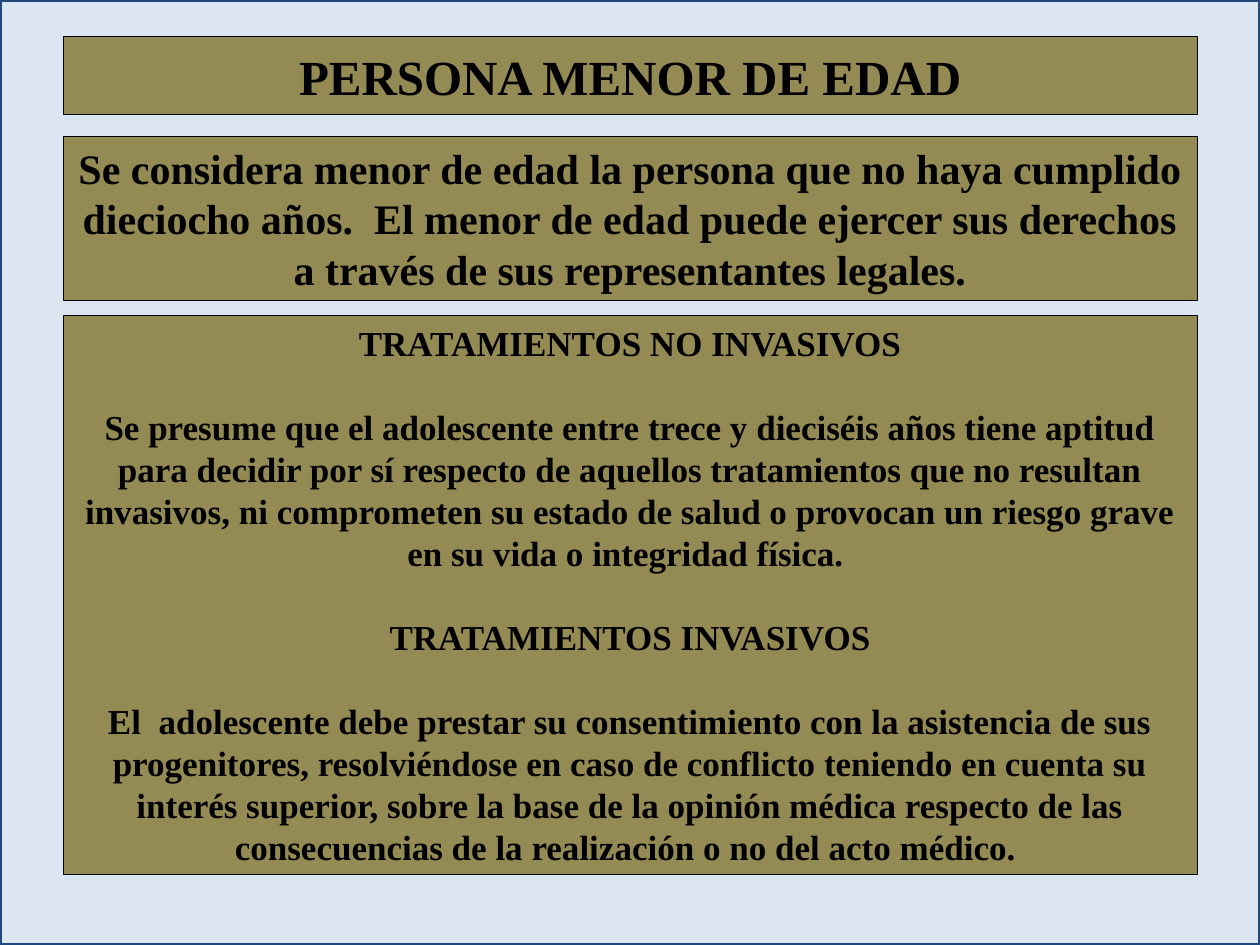
import pptx
import pptx.util
import pptx.dml.color
import pptx.enum.shapes
import pptx.enum.text
from dataclasses import dataclass

Inches = pptx.util.Inches
Pt = pptx.util.Pt
RGB = pptx.dml.color.RGBColor.from_string


@dataclass(frozen=True)
class Theme:
    font: str = "Times New Roman"
    ink: str = "000000"
    panel: str = "948A54"
    back: str = "DCE6F2"
    frame: str = "1F497D"
    head: int = 28
    lead: int = 24
    body: int = 20


def apply(target, values):
    for name, value in values.items():
        setattr(target, name, value)


class Deck:
    def __init__(self, theme):
        self.theme = theme
        self.show = pptx.Presentation()
        apply(self.show, {"slide_width": Inches(10), "slide_height": Inches(7.5)})
        self.slide = self.show.slides.add_slide(self.show.slide_layouts[3])

    def paint(self, shape, fill, line, width):
        shape.fill.solid()
        shape.fill.fore_color.rgb = RGB(fill)
        shape.line.color.rgb = RGB(line)
        shape.line.width = Pt(width)

    def backdrop(self):
        """Add the framed backdrop behind every placeholder."""
        rect = self.slide.shapes.add_shape(
            pptx.enum.shapes.MSO_SHAPE.RECTANGLE, 0, 0,
            self.show.slide_width, self.show.slide_height)
        rect.shadow.inherit = False
        self.paint(rect, self.theme.back, self.theme.frame, 2)
        self.slide.shapes._spTree.insert(2, rect._element)

    def panel(self, index, top, height, size, texts):
        """Fill a placeholder; later paragraphs sit one line apart."""
        shape = self.slide.placeholders[index]
        apply(shape, {"left": Inches(0.5), "top": Inches(top),
                      "width": Inches(9), "height": Inches(height)})
        self.paint(shape, self.theme.panel, self.theme.ink, 0.25)
        frame = shape.text_frame
        frame.text = "\n".join(texts)
        apply(frame, {"word_wrap": True,
                      "auto_size": pptx.enum.text.MSO_AUTO_SIZE.NONE,
                      "vertical_anchor": pptx.enum.text.MSO_ANCHOR.MIDDLE})
        pitch = Pt(size * 1.2)
        for order, para in enumerate(frame.paragraphs):
            props = para._p.get_or_add_pPr()
            props.set("marL", "0")
            props.set("indent", "0")
            apply(para, {"alignment": pptx.enum.text.PP_ALIGN.CENTER,
                         "line_spacing": pitch, "space_after": Pt(0),
                         "space_before": pitch if order else Pt(0)})
            props.append(pptx.oxml.parse_xml(
                '<a:buNone xmlns:a="http://schemas.openxmlformats.org/drawingml/2006/main"/>'))
            for run in para.runs:
                apply(run.font, {"name": self.theme.font, "size": Pt(size),
                                 "bold": True})
                run.font.color.rgb = RGB(self.theme.ink)


def main():
    theme = Theme()
    deck = Deck(theme)
    deck.backdrop()
    deck.panel(0, 0.29, 0.62, theme.head, ["PERSONA MENOR DE EDAD"])
    deck.panel(1, 1.08, 1.3, theme.lead, [
        "Se considera menor de edad la persona que no haya cumplido dieciocho "
        "años.  El menor de edad puede ejercer sus derechos a través de sus "
        "representantes legales."])
    deck.panel(2, 2.5, 4.44, theme.body, [
        "TRATAMIENTOS NO INVASIVOS",
        "Se presume que el adolescente entre trece y dieciséis años tiene aptitud "
        "para decidir por sí respecto de aquellos tratamientos que no resultan "
        "invasivos, ni comprometen su estado de salud o provocan un riesgo grave "
        "en su vida o integridad física. ",
        "TRATAMIENTOS INVASIVOS",
        "El  adolescente debe prestar su consentimiento con la asistencia de sus "
        "progenitores, resolviéndose en caso de conflicto teniendo en cuenta su "
        "interés superior, sobre la base de la opinión médica respecto de las "
        "consecuencias de la realización o no del acto médico. "])
    deck.show.save("out.pptx")


if __name__ == "__main__":
    main()
